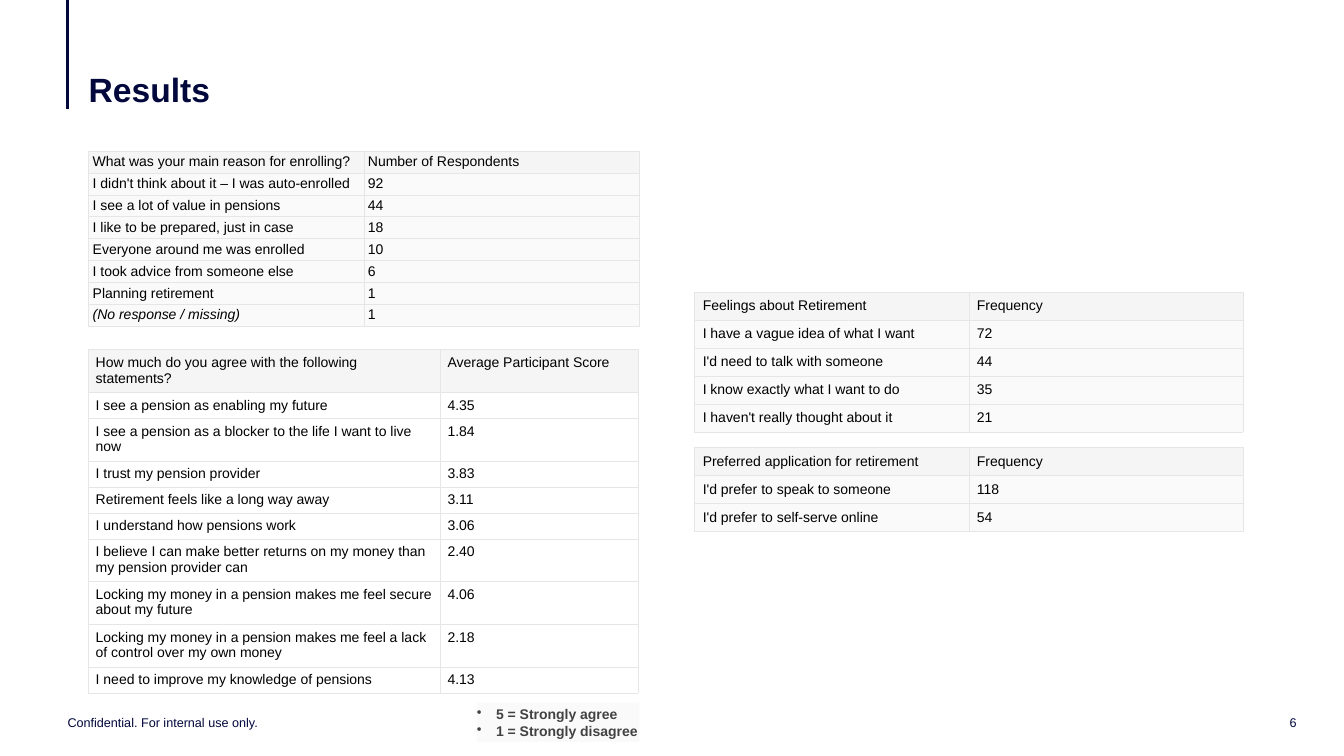
from dataclasses import dataclass

from lxml import etree
from pptx import Presentation
from pptx.dml.color import RGBColor
from pptx.enum.shapes import MSO_CONNECTOR, MSO_SHAPE
from pptx.enum.text import MSO_ANCHOR, MSO_AUTO_SIZE, PP_ALIGN
from pptx.oxml.ns import qn
from pptx.util import Inches, Pt

LEFT, RIGHT = PP_ALIGN.LEFT, PP_ALIGN.RIGHT
TOP, MIDDLE, BOTTOM = MSO_ANCHOR.TOP, MSO_ANCHOR.MIDDLE, MSO_ANCHOR.BOTTOM
STRAIGHT, RECT = MSO_CONNECTOR.STRAIGHT, MSO_SHAPE.RECTANGLE
GROW = MSO_AUTO_SIZE.SHAPE_TO_FIT_TEXT


@dataclass(frozen=True)
class Theme:
    font: str = "Arial"
    navy: str = "02083C"
    black: str = "000000"
    gray: str = "424242"
    head: str = "F5F5F5"
    pale: str = "FAFAFA"
    edge: str = "E6E6E6"
    title: float = 24
    body: float = 10
    small: float = 9
    rule: float = 2.75
    hair: float = 0.5


THEME = Theme()

REASONS = [
    ("What was your main reason for enrolling?", "Number of Respondents"),
    ("I didn't think about it – I was auto-enrolled", "92"),
    ("I see a lot of value in pensions", "44"),
    ("I like to be prepared, just in case", "18"),
    ("Everyone around me was enrolled", "10"),
    ("I took advice from someone else", "6"),
    ("Planning retirement", "1"),
    ("(No response / missing)", "1"),
]
SCORES = [
    ("How much do you agree with the following statements?",
     "Average Participant Score"),
    ("I see a pension as enabling my future", "4.35"),
    ("I see a pension as a blocker to the life I want to live now", "1.84"),
    ("I trust my pension provider", "3.83"),
    ("Retirement feels like a long way away", "3.11"),
    ("I understand how pensions work", "3.06"),
    ("I believe I can make better returns on my money than my pension "
     "provider can", "2.40"),
    ("Locking my money in a pension makes me feel secure about my future",
     "4.06"),
    ("Locking my money in a pension makes me feel a lack of control over "
     "my own money", "2.18"),
    ("I need to improve my knowledge of pensions", "4.13"),
]
FEELINGS = [
    ("Feelings about Retirement", "Frequency"),
    ("I have a vague idea of what I want", "72"),
    ("I'd need to talk with someone", "44"),
    ("I know exactly what I want to do", "35"),
    ("I haven't really thought about it", "21"),
]
CHANNELS = [
    ("Preferred application for retirement", "Frequency"),
    ("I'd prefer to speak to someone", "118"),
    ("I'd prefer to self-serve online", "54"),
]


def rgb(code):
    return RGBColor.from_string(code)


def write(frame, text, size=THEME.body, color=THEME.black, bold=False,
          italic=False, align=LEFT, space=None, bullet=None):
    """Fill a text frame, one paragraph per line of text."""
    for i, line in enumerate(text.split("\n")):
        para = frame.add_paragraph() if i else frame.paragraphs[0]
        para.alignment = align
        if space:
            para.line_spacing = space
        if bullet:
            props = para._p.get_or_add_pPr()
            props.set("marL", str(Inches(0.19)))
            props.set("indent", str(Inches(-0.19)))
            etree.SubElement(props, qn("a:buChar"), char=bullet)
        run = para.add_run()
        run.text = line
        font = run.font
        font.name, font.size = THEME.font, Pt(size)
        font.bold, font.italic = bold, italic
        font.color.rgb = rgb(color)


def inset(item, left, top, right, bottom):
    item.margin_left, item.margin_top = Inches(left), Inches(top)
    item.margin_right, item.margin_bottom = Inches(right), Inches(bottom)


def label(slide, box, text, anchor=MIDDLE, **style):
    frame = slide.shapes.add_textbox(*map(Inches, box)).text_frame
    frame.word_wrap = True
    frame.vertical_anchor = anchor
    inset(frame, 0, 0, 0, 0)
    write(frame, text, color=THEME.navy, **style)


def border(cell):
    props = cell._tc.get_or_add_tcPr()
    for i, side in enumerate(("lnL", "lnR", "lnT", "lnB")):
        line = etree.Element(qn("a:" + side), w=str(Pt(THEME.hair)))
        fill = etree.SubElement(line, qn("a:solidFill"))
        etree.SubElement(fill, qn("a:srgbClr"), val=THEME.edge)
        props.insert(i, line)


def grid(slide, left, top, cols, high, rows, pad, fill=None):
    """Draw a table with a shaded head row and thin borders."""
    table = slide.shapes.add_table(
        len(rows), len(cols), Inches(left), Inches(top),
        Inches(sum(cols)), Inches(high * len(rows))).table
    table.first_row = table.horz_banding = False
    for col, wide in zip(table.columns, cols):
        col.width = Inches(wide)
    for r, row in enumerate(rows):
        table.rows[r].height = Inches(high)
        for c, text in enumerate(row):
            cell = table.cell(r, c)
            cell.vertical_anchor = TOP
            inset(cell, *pad)
            shade = fill if r else THEME.head
            if shade:
                cell.fill.solid()
                cell.fill.fore_color.rgb = rgb(shade)
            else:
                cell.fill.background()
            border(cell)
            write(cell.text_frame, text, italic=text.startswith("("))


def rule(slide, x, top, end):
    line = slide.shapes.add_connector(
        STRAIGHT, Inches(x), Inches(top), Inches(x), Inches(end))
    line.line.color.rgb = rgb(THEME.navy)
    line.line.width = Pt(THEME.rule)
    etree.SubElement(line._element.spPr, qn("a:effectLst"))


def legend(slide, box, text):
    shape = slide.shapes.add_shape(RECT, *map(Inches, box))
    shape.shadow.inherit = False
    shape.fill.solid()
    shape.fill.fore_color.rgb = rgb(THEME.pale)
    shape.line.fill.background()
    frame = shape.text_frame
    frame.word_wrap = False
    frame.auto_size = GROW
    frame.vertical_anchor = MIDDLE
    inset(frame, 0, 0.03, 0, 0.03)
    write(frame, text, color=THEME.gray, bold=True, bullet="•")


def main():
    deck = Presentation()
    deck.slide_width, deck.slide_height = Inches(13.33), Inches(7.5)
    slide = deck.slides.add_slide(deck.slide_layouts[6])

    # Title and its rule
    rule(slide, 0.67, 0, 1.08)
    label(slide, (0.88, 0.26, 11.57, 0.83), "Results", anchor=BOTTOM,
          size=THEME.title, bold=True, space=0.9)

    # Left tables and score legend
    grid(slide, 0.88, 1.5, (2.73, 2.73), 0.2, REASONS,
         (0.04, 0.03, 0.03, 0.02), fill=THEME.pale)
    grid(slide, 0.88, 3.47, (3.49, 1.96), 0.24, SCORES,
         (0.07, 0.05, 0.05, 0.04))
    legend(slide, (4.73, 6.97, 1.61, 0.39),
           "5 = Strongly agree\n1 = Strongly disagree")

    # Right tables
    for top, rows in ((2.9, FEELINGS), (4.44, CHANNELS)):
        grid(slide, 6.89, top, (2.72, 2.72), 0.27, rows,
             (0.08, 0.06, 0.06, 0.05), fill=THEME.pale)

    # Footer
    label(slide, (0.67, 7.09, 4.5, 0.16),
          "Confidential. For internal use only.", size=THEME.small)
    label(slide, (12.47, 7.09, 0.39, 0.16), "6", size=THEME.small,
          align=RIGHT)

    deck.save("out.pptx")


if __name__ == "__main__":
    main()
